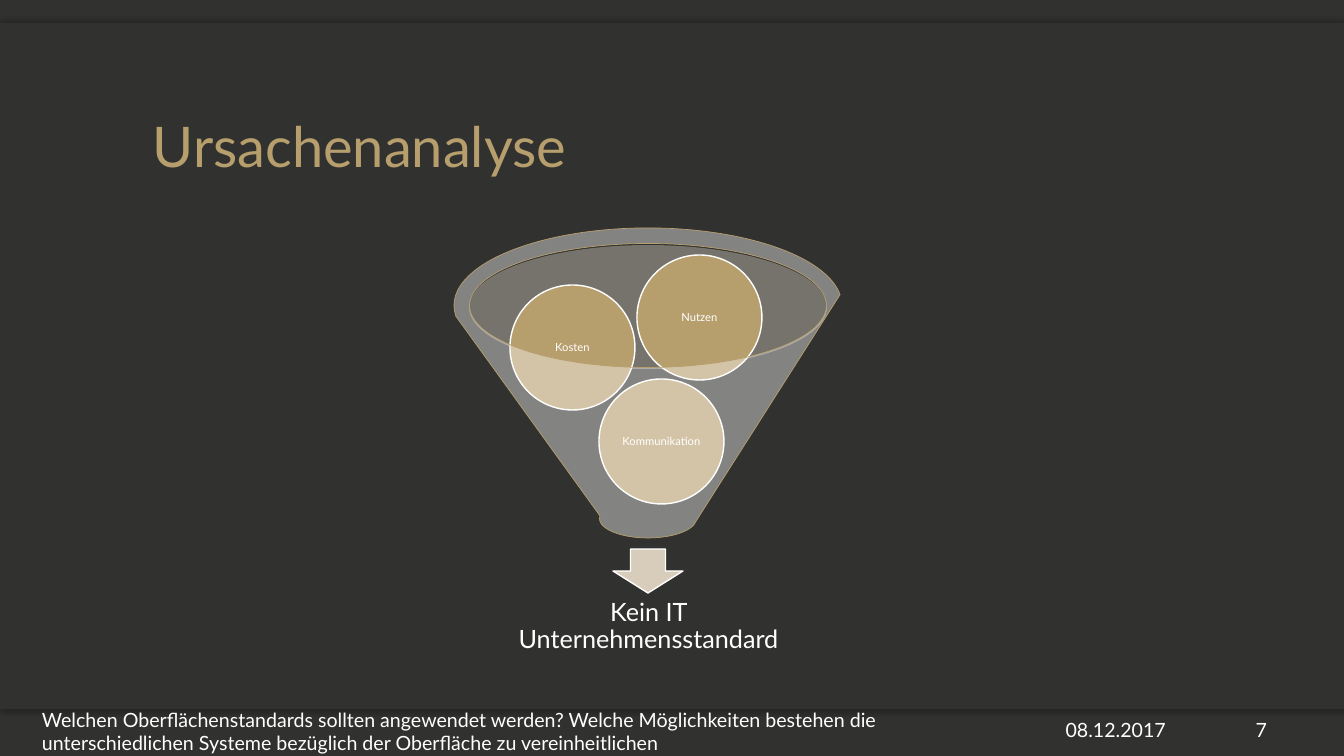
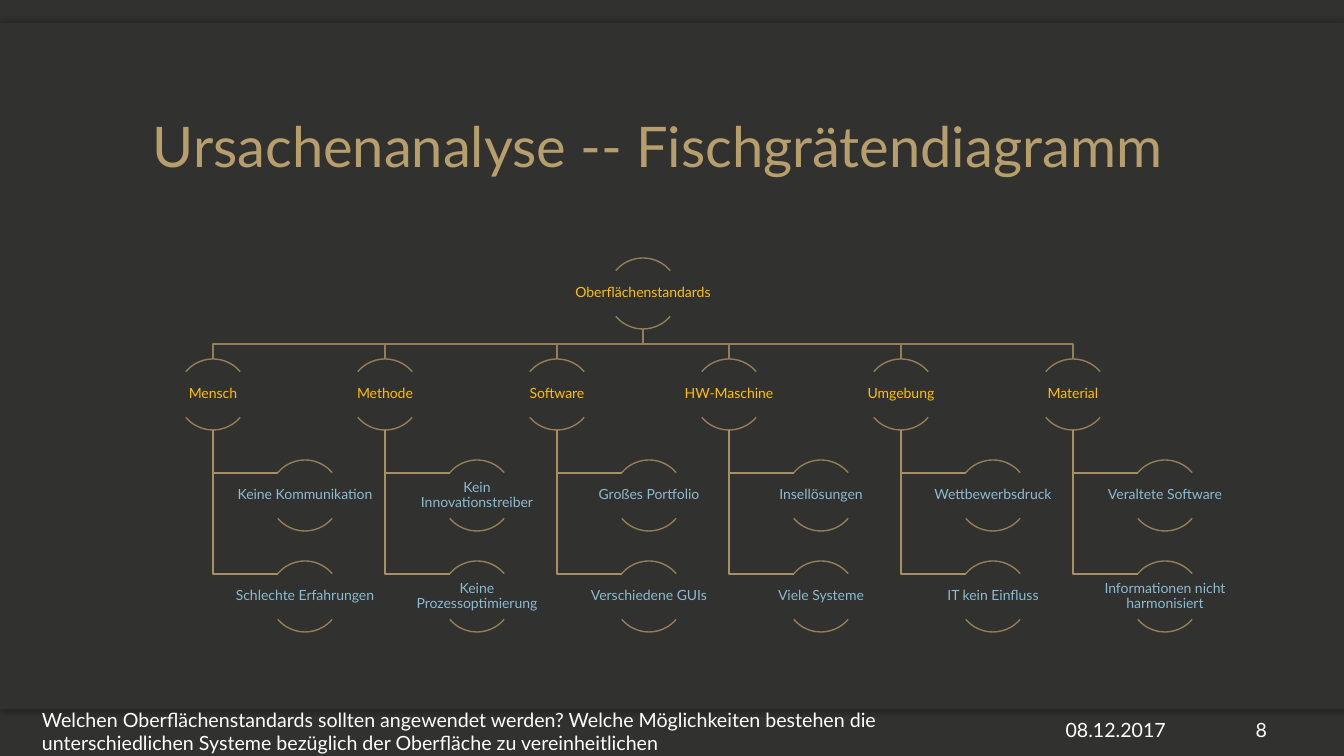
import pptx
import pptx.dml.color
import pptx.enum.shapes
import pptx.enum.text
import pptx.oxml
import pptx.oxml.ns
import pptx.util

WIDTH, HEIGHT = 1344, 756
EMU_PER_PX = 12192000 / WIDTH
FONT = "Lato"
COLORS = {
    "background": "31312F",
    "gold": "B79E6D",
    "white": "FFFFFF",
    "rim": "DFD6C8",
    "arrow": "D8CCBA",
    "trunk": "937F57",
    "branch": "A68F63",
    "cause": "FFC000",
    "detail": "8DBBCF",
}
DATE = "08.12.2017"
FOOTER = (
    "Welchen Oberflächenstandards sollten angewendet werden? "
    "Welche Möglichkeiten bestehen die unterschiedlichen Systeme "
    "bezüglich der Oberfläche zu vereinheitlichen"
)
CAUSES = {
    "Mensch": ["Keine Kommunikation", "Schlechte Erfahrungen"],
    "Methode": ["Kein Innovationstreiber", "Keine Prozessoptimierung"],
    "Software": ["Großes Portfolio", "Verschiedene GUIs"],
    "HW-Maschine": ["Insellösungen", "Viele Systeme"],
    "Umgebung": ["Wettbewerbsdruck", "IT kein Einfluss"],
    "Material": ["Veraltete Software", "Informationen nicht harmonisiert"],
}
SHAPE = pptx.enum.shapes.MSO_SHAPE
ALIGN = pptx.enum.text.PP_ALIGN
ANCHOR = pptx.enum.text.MSO_ANCHOR


def px(length):
    return pptx.util.Emu(round(length * EMU_PER_PX))


def rgb(name):
    return pptx.dml.color.RGBColor.from_string(COLORS[name])


def drawing_element(tag, **attributes):
    element = pptx.oxml.parse_xml(f"<a:{tag} {pptx.oxml.ns.nsdecls('a')}/>")
    for name, value in attributes.items():
        element.set(name, str(value))
    return element


def write_text(frame, text, size, color="white", align=ALIGN.LEFT,
               anchor=ANCHOR.MIDDLE, spacing=None, inset=None):
    frame.word_wrap = True
    frame.vertical_anchor = anchor
    if inset is not None:
        frame.margin_left = frame.margin_right = px(inset)
        frame.margin_top = frame.margin_bottom = px(inset)
    paragraph = frame.paragraphs[0]
    paragraph.alignment = align
    paragraph.line_spacing = spacing
    run = paragraph.add_run()
    run.text = text
    run.font.name = FONT
    run.font.size = pptx.util.Pt(size)
    run.font.color.rgb = rgb(color)


class Deck:
    """Holds the presentation, its style and the current slide."""

    def __init__(self):
        self.presentation = pptx.Presentation()
        self.presentation.slide_width = px(WIDTH)
        self.presentation.slide_height = px(HEIGHT)
        fill = self.presentation.slide_master.background.fill
        fill.solid()
        fill.fore_color.rgb = rgb("background")
        self.slide = None

    def add_slide(self, title, number):
        layout = self.presentation.slide_layouts[6]
        self.slide = self.presentation.slides.add_slide(layout)
        self.band(659, direction=90)
        self.band(23, direction=270)
        self.shape(SHAPE.RECTANGLE, 0, 23, WIDTH, 686, fill="background")
        self.text(title, 143, 46, 1058, 139, size=40, color="gold",
                  anchor=ANCHOR.BOTTOM, spacing=0.9)
        self.text(FOOTER, 32, 706, 919, 50, size=14)
        self.text(DATE, 1029, 715, 147, 30, size=14, align=ALIGN.RIGHT)
        self.text(str(number), 1201, 715, 76, 30, size=14, align=ALIGN.RIGHT)

    def style(self, shape, fill=None, opacity=100, line=None, weight=1):
        shape.shadow.inherit = False
        if fill:
            shape.fill.solid()
            shape.fill.fore_color.rgb = rgb(fill)
            if opacity < 100:
                color = shape.fill._xPr.find(".//" + pptx.oxml.ns.qn("a:srgbClr"))
                color.append(drawing_element("alpha", val=opacity * 1000))
        else:
            shape.fill.background()
        if line:
            shape.line.color.rgb = rgb(line)
            shape.line.width = pptx.util.Pt(weight)
        else:
            shape.line.fill.background()

    def shape(self, kind, left, top, width, height, **style):
        shape = self.slide.shapes.add_shape(
            kind, px(left), px(top), px(width), px(height))
        self.style(shape, **style)
        return shape

    def text(self, text, left, top, width, height, **text_format):
        box = self.slide.shapes.add_textbox(
            px(left), px(top), px(width), px(height))
        write_text(box.text_frame, text, **text_format)

    def band(self, top, direction):
        """Full-width strip whose shadow falls in the given direction."""
        band = self.shape(SHAPE.RECTANGLE, 0, top, WIDTH, 49, fill="background")
        shadow = drawing_element(
            "outerShdw", blurRad=pptx.util.Pt(4), dist=pptx.util.Pt(2),
            dir=direction * 60000, algn="ctr", rotWithShape=0)
        color = drawing_element("srgbClr", val="000000")
        color.append(drawing_element("alpha", val=25000))
        shadow.append(color)
        band.element.spPr.find(pptx.oxml.ns.qn("a:effectLst")).append(shadow)

    def polyline(self, points, color):
        builder = self.slide.shapes.build_freeform(*points[0], scale=EMU_PER_PX)
        builder.add_line_segments(points[1:], close=False)
        self.style(builder.convert_to_shape(), line=color)

    def ball(self, text, left, top):
        ball = self.shape(SHAPE.OVAL, left, top, 125, 125,
                          fill="gold", line="white")
        write_text(ball.text_frame, text, size=8, align=ALIGN.CENTER,
                   spacing=0.9, inset=1)

    def node(self, text, center, top, color):
        """Label between an upper and a lower arc."""
        for start, end in ((220, 320), (40, 140)):
            arc = self.shape(SHAPE.ARC, center - 35.5, top, 71, 71, line="trunk")
            # Arc angles are 1/60000 degree, adjustments are 1/100000.
            arc.adjustments[0] = start * 0.6
            arc.adjustments[1] = end * 0.6
        self.text(text, center - 71, top + 13, 142, 45, size=10, color=color,
                  align=ALIGN.CENTER, spacing=0.9, inset=1)


def add_funnel_slide(deck):
    deck.add_slide("Ursachenanalyse", 7)
    deck.shape(SHAPE.OVAL, 469, 245, 358, 124, fill="rim", opacity=40)
    deck.shape(SHAPE.DOWN_ARROW, 613, 549, 70, 44, fill="arrow", line="white")
    deck.text("Kein IT Unternehmensstandard", 482, 585, 333, 84, size=18,
              align=ALIGN.CENTER, spacing=0.9, inset=14)
    deck.ball("Kommunikation", 599, 379)
    deck.ball("Kosten", 510, 285)
    deck.ball("Nutzen", 637, 255)
    deck.shape(SHAPE.FUNNEL, 454, 228, 388, 310, fill="white", opacity=40,
               line="gold", weight=0.5)


def add_fishbone_slide(deck):
    deck.add_slide("Ursachenanalyse -- Fischgrätendiagramm", 8)
    root, first_column, column_gap = 643, 213, 172
    root_top, row_gap, node_height = 258, 101, 71
    cause_top = root_top + row_gap
    root_bottom = root_top + node_height
    cause_bottom = cause_top + node_height
    crossbar = (root_bottom + cause_top) // 2

    deck.node("Oberflächenstandards", root, root_top, "cause")
    for column, (cause, details) in enumerate(CAUSES.items()):
        center = first_column + column * column_gap
        deck.polyline([(root, root_bottom), (root, crossbar),
                       (center, crossbar), (center, cause_top)], "trunk")
        deck.node(cause, center, cause_top, "cause")
        for row, detail in enumerate(details, start=1):
            detail_top = cause_top + row * row_gap
            joint = detail_top + 13
            deck.polyline([(center, cause_bottom), (center, joint),
                           (center + 65, joint)], "branch")
            deck.node(detail, center + 92, detail_top, "detail")


def main():
    deck = Deck()
    add_funnel_slide(deck)
    add_fishbone_slide(deck)
    deck.presentation.save("out.pptx")


if __name__ == "__main__":
    main()
